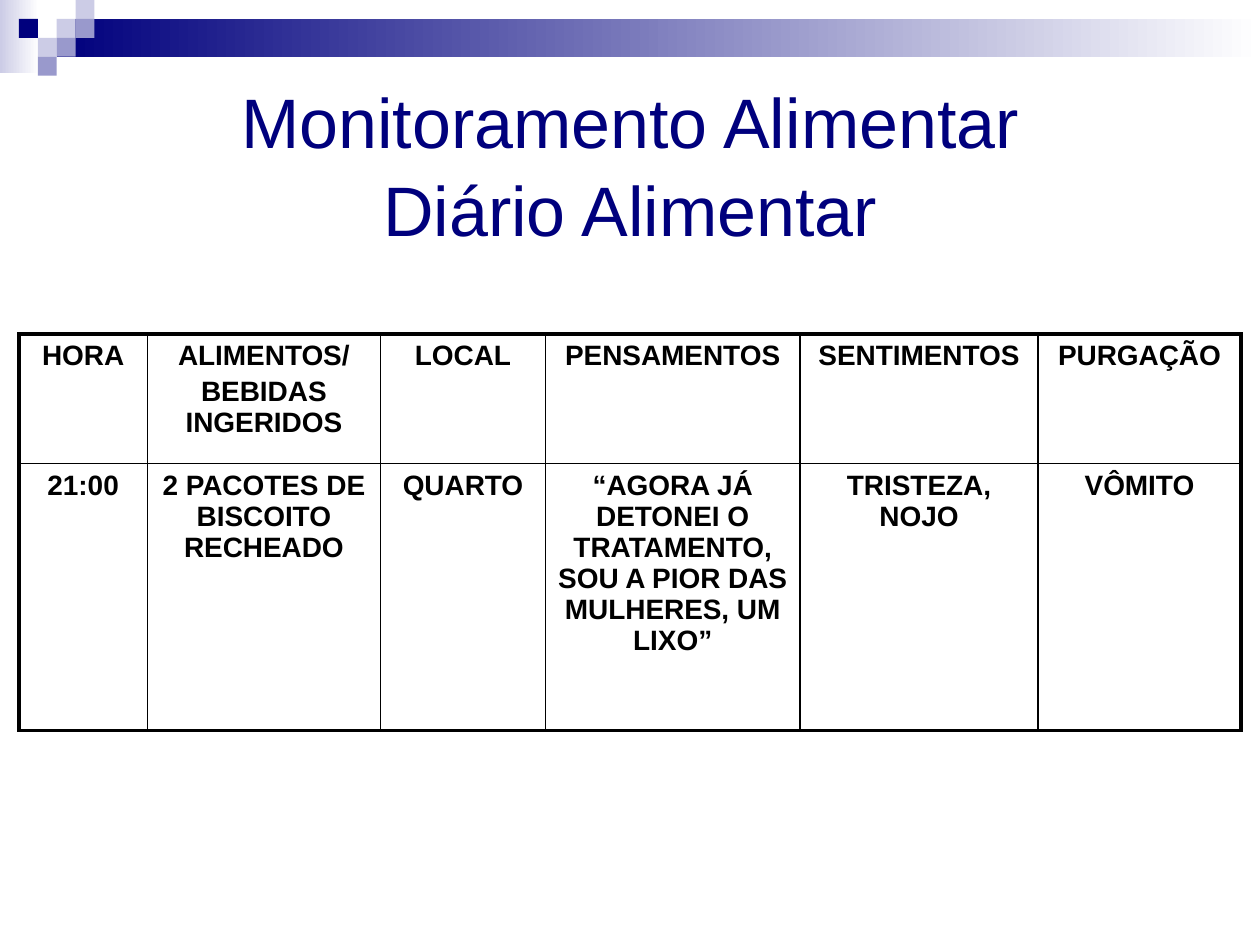
import pptx
import pptx.util
import pptx.dml.color
import pptx.enum.shapes
import pptx.enum.text
import pptx.oxml
import pptx.oxml.ns
from pptx.util import Inches

COLORS = {
    "navy": "00007D",
    "lilac": "CCCCE6",
    "violet": "9999CC",
    "white": "FFFFFF",
    "black": "000000",
    "shadow": "808080",
}
NAMESPACE = pptx.oxml.ns.nsdecls("a")


def rgb(name):
    return pptx.dml.color.RGBColor.from_string(COLORS[name])


def write_text(para, text, *, font, size, color, bold=False, space_before=0, shadow=False):
    """Write centred text; a newline becomes a line break."""
    para.alignment = pptx.enum.text.PP_ALIGN.CENTER
    para.space_before = pptx.util.Pt(space_before)
    for index, line in enumerate(text.split("\n")):
        if index:
            para.add_line_break()
        span = para.add_run()
        span.text = line
        span.font.name = font
        span.font.size = pptx.util.Pt(size)
        span.font.bold = bold
        span.font.color.rgb = rgb(color)
        if shadow:
            fill = span.font._element.find(pptx.oxml.ns.qn("a:solidFill"))
            fill.addnext(pptx.oxml.parse_xml(
                f'<a:effectLst {NAMESPACE}><a:outerShdw dist="35921" dir="2700000">'
                f'<a:srgbClr val="{COLORS["shadow"]}"/></a:outerShdw></a:effectLst>'))


class SlideBuilder:
    font = "Arial"
    outer_line = 2.25
    inner_line = 1

    def __init__(self, page):
        self.page = page

    def rectangle(self, left, top, width, height, color, fade_to=None):
        box = self.page.shapes.add_shape(
            pptx.enum.shapes.MSO_SHAPE.RECTANGLE,
            Inches(left), Inches(top), Inches(width), Inches(height))
        box.shadow.inherit = False
        box.line.fill.background()
        if fade_to:
            box.fill.gradient()
            box.fill.gradient_angle = 0
            for stop, name in zip(box.fill.gradient_stops, (color, fade_to)):
                stop.color.rgb = rgb(name)
        else:
            box.fill.solid()
            box.fill.fore_color.rgb = rgb(color)

    def title(self, text, left, top, width, height):
        box = self.page.shapes.title
        box.left, box.top = Inches(left), Inches(top)
        box.width, box.height = Inches(width), Inches(height)
        frame = box.text_frame
        frame.word_wrap = True
        frame.auto_size = pptx.enum.text.MSO_AUTO_SIZE.NONE
        frame.vertical_anchor = pptx.enum.text.MSO_ANCHOR.MIDDLE
        frame.margin_top, frame.margin_bottom = Inches(0.1), Inches(0.02)
        para = frame.paragraphs[0]
        para.line_spacing = 1.05
        write_text(para, text, font=self.font, size=40, color="navy", shadow=True)

    def borders(self, cell, outer_sides):
        properties = cell._tc.get_or_add_tcPr()
        for side in "LRTB":
            points = self.outer_line if side in outer_sides else self.inner_line
            properties.append(pptx.oxml.parse_xml(
                f'<a:ln{side} {NAMESPACE} w="{int(pptx.util.Pt(points))}"><a:solidFill>'
                f'<a:srgbClr val="{COLORS["black"]}"/></a:solidFill></a:ln{side}>'))

    def table(self, rows, left, top, widths, heights):
        table = self.page.shapes.add_table(
            len(heights), len(widths), Inches(left), Inches(top),
            Inches(sum(widths)), Inches(sum(heights))).table
        table.first_row = table.horz_banding = False
        for column, width in zip(table.columns, widths):
            column.width = Inches(width)
        for row, height in zip(table.rows, heights):
            row.height = Inches(height)
        for r, texts in enumerate(rows):
            for c, paragraphs in enumerate(texts):
                cell = table.cell(r, c)
                edges = {"L": c == 0, "R": c == len(widths) - 1,
                         "T": r == 0, "B": r == len(heights) - 1}
                self.borders(cell, [side for side, outer in edges.items() if outer])
                cell.fill.background()
                frame = cell.text_frame
                for index, text in enumerate(paragraphs):
                    para = frame.add_paragraph() if index else frame.paragraphs[0]
                    write_text(para, text, font=self.font, size=16, color="black",
                               bold=True, space_before=3)


def main():
    deck = pptx.Presentation()
    deck.slide_width, deck.slide_height = Inches(10), Inches(7.5)
    page = deck.slides.add_slide(deck.slide_layouts[5])
    builder = SlideBuilder(page)

    # Header band and its checkered tiles
    builder.rectangle(0, 0, 0.31, 0.58, "lilac", fade_to="white")
    builder.rectangle(0.45, 0.15, 9.55, 0.3, "navy", fade_to="white")
    tile = 0.15
    for column, row, color in [
        (3, 1, "lilac"), (4, 0, "lilac"), (4, 1, "violet"), (2, 2, "lilac"),
        (1, 1, "navy"), (3, 2, "violet"), (2, 3, "violet"),
    ]:
        builder.rectangle(column * tile, row * tile, tile, tile, color)

    # Title
    builder.title("Monitoramento Alimentar\nDiário Alimentar", 0.5, 0.5, 9, 1.5)

    # Food diary
    diary = [
        [["HORA"], ["ALIMENTOS/", "BEBIDAS INGERIDOS"], ["LOCAL"],
         ["PENSAMENTOS"], ["SENTIMENTOS"], ["PURGAÇÃO"]],
        [["21:00"], ["2 PACOTES DE BISCOITO RECHEADO"], ["QUARTO"],
         ["“AGORA JÁ DETONEI O TRATAMENTO, SOU A PIOR DAS MULHERES, UM LIXO”"],
         ["TRISTEZA, NOJO"], ["VÔMITO"]],
    ]
    builder.table(diary, 0.15, 2.65,
                  widths=[1.02, 1.85, 1.31, 2.02, 1.89, 1.61], heights=[1.03, 2.12])

    deck.save("out.pptx")


if __name__ == "__main__":
    main()
